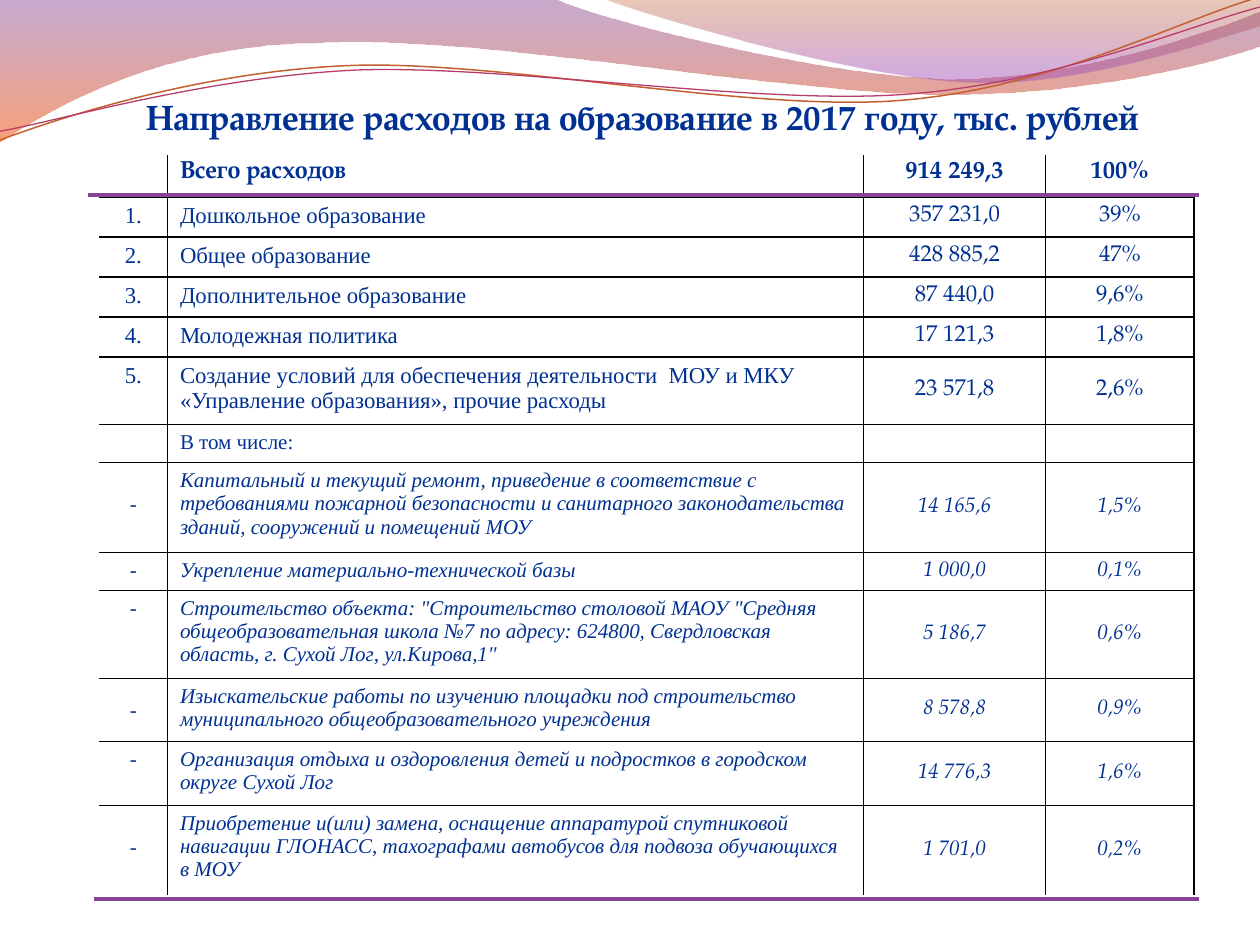
from lxml import etree
from pptx import Presentation
from pptx.dml.color import RGBColor
from pptx.enum.shapes import MSO_CONNECTOR
from pptx.enum.text import MSO_ANCHOR, PP_ALIGN
from pptx.oxml.ns import qn
from pptx.util import Pt

LEFT, CENTER = PP_ALIGN.LEFT, PP_ALIGN.CENTER
MIDDLE = MSO_ANCHOR.MIDDLE
STRAIGHT = MSO_CONNECTOR.STRAIGHT

COLORS = {
    "text": "003192", "cell": "FFFFFF", "grid": "000000", "rule": "874396",
    "violet": "834591", "orange": "F35307", "rust": "B74915", "lilac": "A14BB4",
    "wave orange": "C45F30", "wave pink": "B83D68",
}
SERIF, ANTIQUA = "Times New Roman", "TeX Gyre Pagella"

TITLE = "Направление расходов на образование в 2017 году, тыс. рублей"

# kind, row height, place of the mark, mark, name, amount, share
ROWS = [
    ("total", 24, "top", "", "Всего расходов", "914 249,3", "100%"),
    ("main", 22.8, "top", "1.", "Дошкольное образование", "357 231,0", "39%"),
    ("main", 22.8, "top", "2.", "Общее образование", "428 885,2", "47%"),
    ("main", 22.8, "top", "3.", "Дополнительное образование", "87 440,0", "9,6%"),
    ("main", 22.8, "top", "4.", "Молодежная политика", "17 121,3", "1,8%"),
    ("main", 38.8, "top", "5.", "Создание условий для обеспечения деятельности  МОУ и МКУ "
     "«Управление образования», прочие расходы", "23 571,8", "2,6%"),
    ("heading", 21.1, "top", "", "В том числе:", "", ""),
    ("detail", 51.4, "second line", "-", "Капитальный и текущий ремонт, приведение в "
     "соответствие с требованиями пожарной безопасности и санитарного законодательства "
     "зданий, сооружений и помещений МОУ", "14 165,6", "1,5%"),
    ("detail", 21.6, "top", "-", "Укрепление материально-технической базы", "1 000,0", "0,1%"),
    ("detail", 50.3, "top", "-", 'Строительство объекта: "Строительство столовой МАОУ "Средняя '
     "общеобразовательная школа №7 по адресу: 624800, Свердловская "
     'область, г. Сухой Лог, ул.Кирова,1"', "5 186,7", "0,6%"),
    ("detail", 36, "middle", "-", "Изыскательские работы по изучению площадки под строительство "
     "муниципального общеобразовательного учреждения", "8 578,8", "0,9%"),
    ("detail", 36.4, "top", "-", "Организация отдыха и оздоровления детей и подростков в "
     "городском округе Сухой Лог", "14 776,3", "1,6%"),
    ("detail", 51.4, "second line", "-", "Приобретение и(или) замена, оснащение аппаратурой "
     "спутниковой навигации ГЛОНАСС, тахографами автобусов для подвоза обучающихся "
     "в МОУ", "1 701,0", "0,2%"),
]
COLUMN_WIDTHS = [39, 397.8, 104, 85]
TABLE_LEFT, TABLE_TOP = 56.7, 88.5
KIND_SIZES = {"total": 14, "main": 13, "heading": 12, "detail": 12}
SECOND_LINE_MARGIN = 17.4

# Each path is a start point, then lines (one point) and curves (three points)
BANDS = [
    ([(-0.7, -0.7), [(317, -0.7)],
      [(343, 12), (478, 45), (546, 45)], [(614, 45), (690, 19), (720, 6.5)], [(720.7, 26)],
      [(708, 32), (626, 55), (537, 54)], [(448, 54), (275, 20), (185, 24.5)],
      [(93, 25), (33, 60), (-0.7, 81.4)]],
     [("violet", 0, 45), ("orange", 1, 55)]),
    ([(345, -0.7), [(366, 8), (491, 45), (554, 47)], [(616, 50), (692, 23), (720, 15)],
      [(720, 0)]],
     [("rust", 0, 30), ("lilac", 0.8, 45)]),
]
WAVES = [
    ([(0, 80), [(35, 67), (114, 41), (199, 37.5)], [(284, 34), (427, 64), (513, 57.5)],
      [(600, 51), (675, 11), (719, -1.5)]], "wave orange", 0.85),
    ([(0, 75), [(34, 69), (118, 44), (204, 40)], [(290, 37), (430, 60), (516, 54)],
      [(602, 48), (678, 15), (720, 4)]], "wave pink", 0.75),
]
RULES = [(50.4, 111.6), (53.8, 513.8)]  # left, top
RULE_RIGHT = 685.4


def color(name):
    return RGBColor.from_string(COLORS[name])


def write(frame, text, size, font=SERIF, bold=False, italic=False, align=LEFT):
    para = frame.paragraphs[0]
    para.alignment = align
    if not text:
        # The size of an empty paragraph keeps its row low
        etree.SubElement(para._p, qn("a:endParaRPr"), sz=str(size * 100))
        return
    span = para.add_run()
    span.text = text
    span.font.size, span.font.name = Pt(size), font
    span.font.bold, span.font.italic = bold, italic
    span.font.color.rgb = color("text")


def add_outline(page, route, close):
    """Draw every point as a corner, then join each triple into a Bezier curve."""
    start, *steps = route
    builder = page.shapes.build_freeform(Pt(start[0]), Pt(start[1]), scale=1.0)
    builder.add_line_segments([(Pt(x), Pt(y)) for step in steps for x, y in step], close=close)
    shape = builder.convert_to_shape()
    shape.shadow.inherit = False
    corners = iter(list(shape._element.iter(qn("a:lnTo"))))
    for step in steps:
        group = [next(corners) for _ in step]
        if len(group) == 3:
            curve = etree.Element(qn("a:cubicBezTo"))
            group[0].addprevious(curve)
            for corner in group:
                curve.append(corner[0])
                corner.getparent().remove(corner)
    return shape


def add_band(page, route, stops):
    band = add_outline(page, route, close=True)
    band.line.fill.background()
    band.fill.gradient()
    band.fill.gradient_angle = 270
    for stop, (name, position, _) in zip(band.fill.gradient_stops, stops):
        stop.color.rgb = color(name)
        stop.position = position
    for tint, (_, _, opacity) in zip(band._element.spPr.iter(qn("a:srgbClr")), stops):
        etree.SubElement(tint, qn("a:alpha"), val=str(opacity * 1000))


def add_wave(page, route, name, width):
    wave = add_outline(page, route, close=False)
    wave.fill.background()
    wave.line.color.rgb = color(name)
    wave.line.width = Pt(width)


def set_borders(cell, sides):
    properties = cell._tc.get_or_add_tcPr()
    for side, shown in sides.items():
        border = etree.SubElement(properties, qn("a:ln" + side), w=str(Pt(1)))
        if shown:
            fill = etree.SubElement(border, qn("a:solidFill"))
            etree.SubElement(fill, qn("a:srgbClr"), val=COLORS["grid"])
        else:
            etree.SubElement(border, qn("a:noFill"))


def add_expense_table(page):
    frame = page.shapes.add_table(
        len(ROWS), len(COLUMN_WIDTHS), Pt(TABLE_LEFT), Pt(TABLE_TOP),
        Pt(sum(COLUMN_WIDTHS)), Pt(sum(row[1] for row in ROWS)))
    table = frame.table
    table.first_row = table.horz_banding = False
    for column, width in zip(table.columns, COLUMN_WIDTHS):
        column.width = Pt(width)
    last_row, last_column = len(ROWS) - 1, len(COLUMN_WIDTHS) - 1
    for r, (kind, height, mark_place, *texts) in enumerate(ROWS):
        table.rows[r].height = Pt(height)
        for c, text in enumerate(texts):
            cell = table.cell(r, c)
            figure = c >= 2
            set_borders(cell, {"L": c > 0, "R": c < last_column or r > 0,
                               "T": r > 0, "B": r < last_row})
            cell.fill.solid()
            cell.fill.fore_color.rgb = color("cell")
            if c == 0 and mark_place == "middle":
                cell.vertical_anchor = MIDDLE
            elif c == 0 and mark_place == "second line":
                cell.margin_top = Pt(SECOND_LINE_MARGIN)
            elif figure and kind in ("main", "detail"):
                cell.vertical_anchor = MIDDLE
                cell.margin_left = cell.margin_right = Pt(0)
                cell.margin_top = cell.margin_bottom = Pt(0)
            write(cell.text_frame, text, KIND_SIZES[kind],
                  font=ANTIQUA if figure or kind == "total" else SERIF,
                  bold=kind == "total", italic=kind == "detail" and c > 0,
                  align=LEFT if c == 1 else CENTER)


def add_rule(page, left, top):
    rule = page.shapes.add_connector(STRAIGHT, Pt(left), Pt(top), Pt(RULE_RIGHT), Pt(top))
    rule.line.color.rgb = color("rule")
    rule.line.width = Pt(2.25)
    etree.SubElement(rule._element.spPr, qn("a:effectLst"))


def main():
    deck = Presentation()
    deck.slide_width, deck.slide_height = Pt(720), Pt(540)
    page = deck.slides.add_slide(deck.slide_layouts[6])
    for band in BANDS:
        add_band(page, *band)
    for wave in WAVES:
        add_wave(page, *wave)
    box = page.shapes.add_textbox(Pt(42.5), Pt(51), Pt(649.5), Pt(32))
    box.text_frame.word_wrap = True
    write(box.text_frame, TITLE, 20, font=ANTIQUA, bold=True, align=CENTER)
    add_expense_table(page)
    for rule in RULES:
        add_rule(page, *rule)
    deck.save("out.pptx")


if __name__ == "__main__":
    main()
